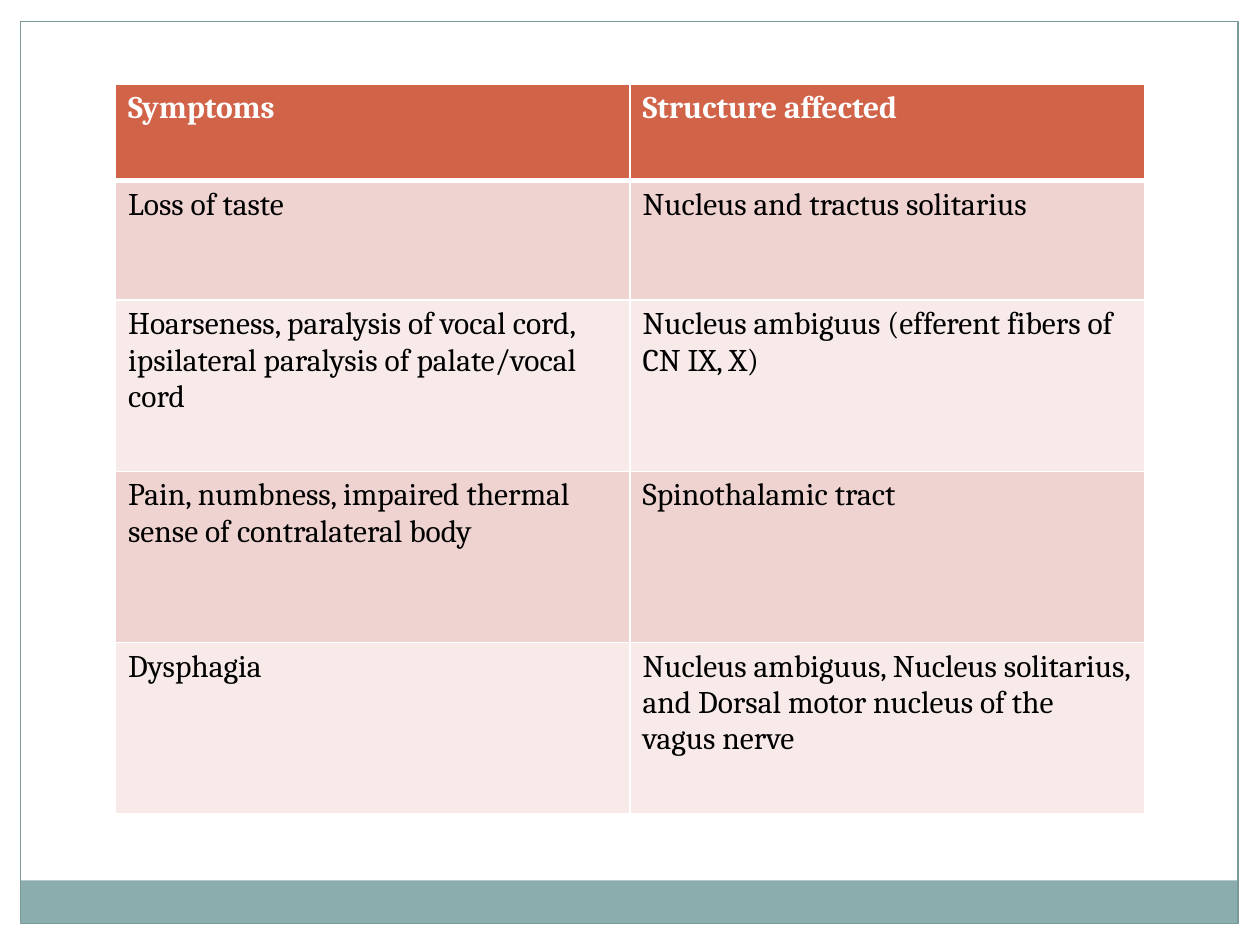
from dataclasses import dataclass
from typing import Optional

from lxml.etree import SubElement
from pptx import Presentation
from pptx.dml.color import RGBColor
from pptx.enum.shapes import MSO_SHAPE
from pptx.oxml.ns import qn
from pptx.util import Cm, Pt

COLORS = {
    "white": "FFFFFF",
    "black": "000000",
    "teal": "8CADAE",
    "frame": "7C999A",
    "header": "D16349",
    "band_dark": "EED3D0",
    "band_light": "F7EAE9",
}
FONT = "Cambria"
SLIDE_WIDTH = 25.4
SLIDE_HEIGHT = 19.05
MARGIN = 0.42
COLUMN_WIDTH = 10.37


@dataclass
class Panel:
    left: float
    top: float
    width: float
    height: float
    fill: Optional[str] = None
    line: Optional[str] = None


@dataclass
class SymptomRow:
    symptom: str
    structure: str
    height: float


PANELS = [
    Panel(0, 0, SLIDE_WIDTH, MARGIN, fill="white"),
    Panel(SLIDE_WIDTH - MARGIN, 0, MARGIN, SLIDE_HEIGHT, fill="white"),
    Panel(0, 0, MARGIN, SLIDE_HEIGHT, fill="white"),
    Panel(MARGIN, 17.75, 24.54, 0.86, fill="teal"),
    Panel(MARGIN, 0.43, 24.54, 18.19, line="frame"),
]

ROWS = [
    SymptomRow("Symptoms", "Structure affected", 1.95),
    SymptomRow("Loss of taste", "Nucleus and tractus solitarius", 2.41),
    SymptomRow(
        "Hoarseness, paralysis of vocal cord, ipsilateral paralysis of palate/vocal cord",
        "Nucleus ambiguus (efferent fibers of CN IX, X)",
        3.45,
    ),
    SymptomRow(
        "Pain, numbness, impaired thermal sense of contralateral body",
        "Spinothalamic tract",
        3.45,
    ),
    SymptomRow(
        "Dysphagia",
        "Nucleus ambiguus, Nucleus solitarius, and Dorsal motor nucleus of the vagus nerve",
        3.45,
    ),
]


def rgb(name: str) -> RGBColor:
    return RGBColor.from_string(COLORS[name])


def write_text(frame, text: str, *, size: float = 18, color: str = "black", bold: bool = False) -> None:
    run = frame.paragraphs[0].add_run()
    run.text = text
    run.font.name = FONT
    run.font.size = Pt(size)
    run.font.bold = bold
    run.font.color.rgb = rgb(color)


def draw_panel(slide, panel: Panel) -> None:
    shape = slide.shapes.add_shape(
        MSO_SHAPE.RECTANGLE, Cm(panel.left), Cm(panel.top), Cm(panel.width), Cm(panel.height)
    )
    shape.shadow.inherit = False
    if panel.fill:
        shape.fill.solid()
        shape.fill.fore_color.rgb = rgb(panel.fill)
    else:
        shape.fill.background()
    if panel.line:
        shape.line.color.rgb = rgb(panel.line)
        shape.line.width = Pt(0.75)
    else:
        shape.line.fill.background()


def set_borders(cell, *, top: float = 1, bottom: float = 1) -> None:
    properties = cell._tc.get_or_add_tcPr()
    widths = {"a:lnL": 1, "a:lnR": 1, "a:lnT": top, "a:lnB": bottom}
    for position, (tag, width) in enumerate(widths.items()):
        border = SubElement(properties, qn(tag), w=str(Pt(width)))
        fill = SubElement(border, qn("a:solidFill"))
        SubElement(fill, qn("a:srgbClr"), val=COLORS["white"])
        properties.insert(position, border)


def draw_table(slide, rows: list[SymptomRow]) -> None:
    height = sum(row.height for row in rows)
    table = slide.shapes.add_table(
        len(rows), 2, Cm(2.33), Cm(1.69), Cm(2 * COLUMN_WIDTH), Cm(height)
    ).table
    for column in table.columns:
        column.width = Cm(COLUMN_WIDTH)
    for index, row in enumerate(rows):
        table.rows[index].height = Cm(row.height)
        is_header = index == 0
        band = "header" if is_header else "band_dark" if index % 2 else "band_light"
        for column_index, text in enumerate((row.symptom, row.structure)):
            cell = table.cell(index, column_index)
            cell.fill.solid()
            cell.fill.fore_color.rgb = rgb(band)
            set_borders(cell, top=3 if index == 1 else 1, bottom=3 if is_header else 1)
            write_text(
                cell.text_frame, text, color="white" if is_header else "black", bold=is_header
            )


def main() -> None:
    presentation = Presentation()
    presentation.slide_width = Cm(SLIDE_WIDTH)
    presentation.slide_height = Cm(SLIDE_HEIGHT)
    slide = presentation.slides.add_slide(presentation.slide_layouts[6])
    for panel in PANELS:
        draw_panel(slide, panel)
    draw_table(slide, ROWS)
    presentation.save("out.pptx")


if __name__ == "__main__":
    main()
